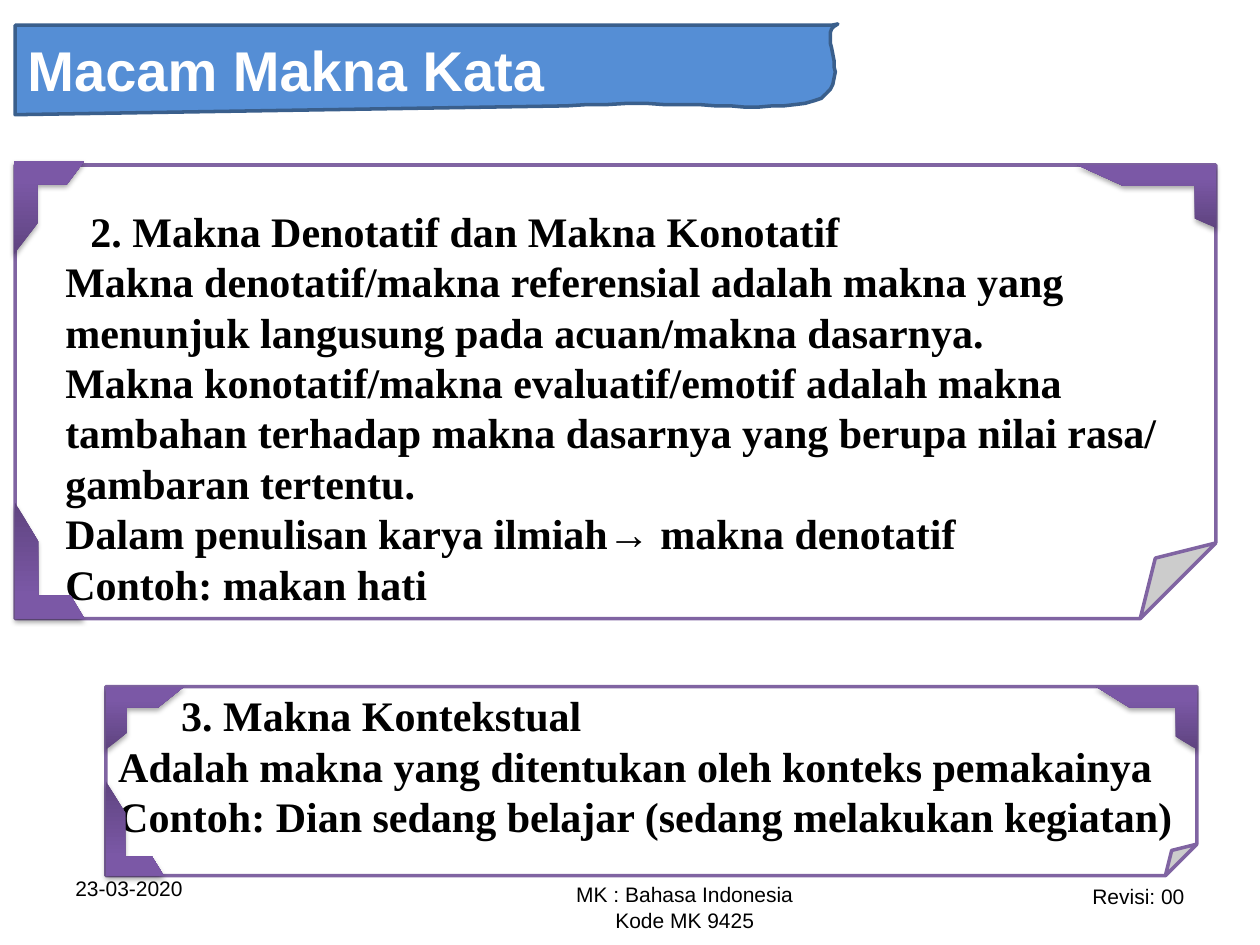
from lxml import etree
from pptx import Presentation
from pptx.dml.color import RGBColor
from pptx.enum.shapes import MSO_SHAPE as Shape
from pptx.enum.text import MSO_ANCHOR as Anchor, PP_ALIGN as Align
from pptx.oxml.ns import qn
from pptx.util import Pt

PX = 9144
CORNER_STOPS = ((0, "5F4480"), (80, "7B58A6"), (100, "7C57A8"))


def px(*lengths):
    """Turn lengths in px (100 to the inch) into EMU."""
    return [length * PX for length in lengths]


def colour(value):
    """Turn a hex string into a colour."""
    return RGBColor.from_string(value)


def child(parent, tag, **attributes):
    """Append a drawing element and return it."""
    values = {name: str(value) for name, value in attributes.items()}
    return etree.SubElement(parent, qn("a:" + tag), values)


def write(shape, lines, size, font, ink="000000", bold=False, align=Align.LEFT,
          anchor=Anchor.TOP, top=5, indents=()):
    """Fill a shape with paragraphs that share one style."""
    frame = shape.text_frame
    frame.word_wrap = True
    frame.vertical_anchor = anchor
    frame.margin_top = top * PX
    frame.text = "\n".join(lines)
    for para in frame.paragraphs:
        para.alignment = align
        para.font.size = Pt(size)
        para.font.name = font
        para.font.bold = bold
        para.font.color.rgb = colour(ink)
    for para, indent in zip(frame.paragraphs, indents):
        properties = para._p.get_or_add_pPr()
        properties.set("marL", str(indent * PX))
        properties.set("indent", "0")


def paint(shape, fill, line):
    """Give a shape a plain fill and a 2 pt outline."""
    shape.shadow.inherit = False
    shape.fill.solid()
    shape.fill.fore_color.rgb = colour(fill)
    shape.line.color.rgb = colour(line)
    shape.line.width = Pt(2)


def bezier(points, steps=16):
    """Sample a cubic curve, leaving out its first point."""
    for step in range(1, steps + 1):
        t = step / steps
        weights = ((1 - t) ** 3, 3 * t * (1 - t) ** 2, 3 * t * t * (1 - t), t ** 3)
        yield tuple(sum(w * point[axis] for w, point in zip(weights, points))
                    for axis in (0, 1))


def add_banner(page, left, top, title):
    """Draw the curled title banner."""
    curl = ((653, 0), (633, 6), (670, 50), (634, 61))
    wave = ((634, 61), (598, 72), (526, 59), (438, 65))
    outline = [(648, 1), (653, 0), *bezier(curl), *bezier(wave), (0, 72)]
    builder = page.shapes.build_freeform(0, 1, scale=PX)
    builder.add_line_segments(outline, close=True)
    banner = builder.convert_to_shape(*px(left, top))
    paint(banner, "558ED5", "3A5F8C")
    write(banner, [title], 32, "Arial", "FFFFFF", True, anchor=Anchor.MIDDLE)


def add_corner(page, box, flip=None):
    """Draw one purple photo corner with its gradient and shadow."""
    corner = page.shapes.add_shape(Shape.HALF_FRAME, *px(*box))
    corner.line.fill.background()
    corner.shadow.inherit = False
    properties = corner._element.spPr
    if flip:
        properties.find(qn("a:xfrm")).set(flip, "1")
    gradient = etree.Element(qn("a:gradFill"), rotWithShape="1")
    stops = child(gradient, "gsLst")
    for position, shade in CORNER_STOPS:
        child(child(stops, "gs", pos=position * 1000), "srgbClr", val=shade)
    child(gradient, "lin", ang=270 * 60000, scaled=0)
    properties.find(qn("a:prstGeom")).addnext(gradient)
    shadow = child(properties.find(qn("a:effectLst")), "outerShdw", blurRad=Pt(3.1),
                   dist=Pt(1.8), dir=90 * 60000, rotWithShape=0)
    child(child(shadow, "srgbClr", val="000000"), "alpha", val=35000)


def add_panel(page, box, lines, corners, nudge=(0, 0), **style):
    """Draw a folded sheet with text and three photo corners."""
    left, top, width, height = box
    sheet = page.shapes.add_shape(Shape.FOLDED_CORNER, *px(*box))
    paint(sheet, "FFFFFF", "8064A2")
    write(sheet, lines, 24, "Times New Roman", bold=True, **style)
    upper_left, upper_right, lower_left = corners
    add_corner(page, (left + nudge[0], top + nudge[1], *upper_left))
    add_corner(page, (left + width - upper_right[0], top, *upper_right), "flipH")
    add_corner(page, (left, top + height - lower_left[1], *lower_left), "flipV")


def add_footer(page, top):
    """Place the date, course and revision along the bottom."""
    parts = (
        ((50, top, 233, 40), ["23-03-2020"], Align.LEFT, 0),
        ((335, top, 417, 40), ["MK : Bahasa Indonesia", "Kode MK 9425"], Align.CENTER, 5),
        ((717, top + 1, 233, 30), ["Revisi: 00"], Align.RIGHT, 5),
    )
    for box, lines, align, inset in parts:
        label = page.shapes.add_textbox(*px(*box))
        write(label, lines, 12, "Arial", align=align, top=inset)


def main():
    """Build the slide and save it."""
    deck = Presentation()
    deck.slide_width, deck.slide_height = px(1000, 750)
    page = deck.slides.add_slide(deck.slide_layouts[6])
    add_footer(page, 695)
    add_banner(page, 12, 19, "Macam Makna Kata")
    add_panel(page, (12, 131, 953, 360), [
        "\t2. Makna Denotatif dan Makna Konotatif",
        "Makna denotatif/makna referensial adalah makna yang menunjuk langusung "
        "pada acuan/makna dasarnya.",
        "Makna konotatif/makna evaluatif/emotif adalah makna tambahan terhadap "
        "makna dasarnya yang berupa nilai rasa/ gambaran tertentu.",
        "Dalam penulisan karya ilmiah→ makna denotatif",
        "Contoh: makan hati",
    ], ((56, 74), (110, 50), (55, 92)), nudge=(-1, -3), top=32, indents=(0, 30, 30, 30, 30))
    add_panel(page, (84, 545, 866, 150), [
        "\t3. Makna Kontekstual",
        "Adalah makna yang ditentukan oleh konteks pemakainya Contoh: Dian sedang "
        "belajar (sedang melakukan kegiatan)",
    ], ((62, 50), (80, 50), (46, 75)), anchor=Anchor.MIDDLE)
    deck.save("out.pptx")


if __name__ == "__main__":
    main()
